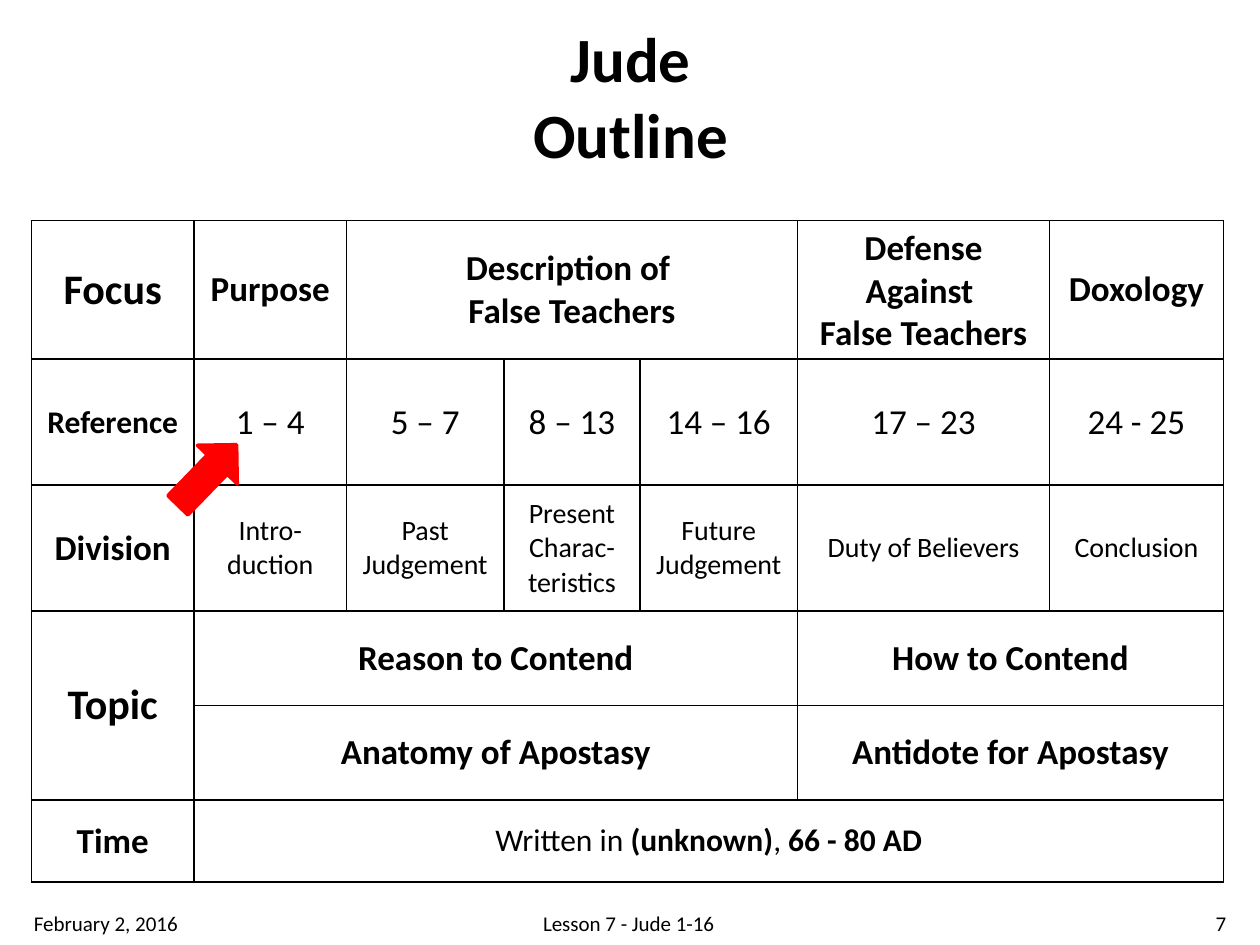
from pptx import Presentation
from pptx.dml.color import RGBColor
from pptx.enum.shapes import MSO_SHAPE
from pptx.enum.text import MSO_ANCHOR, MSO_AUTO_SIZE, PP_ALIGN
from pptx.oxml.ns import qn
from pptx.util import Inches, Pt
from lxml import etree

BLACK = RGBColor(0, 0, 0)
WHITE = RGBColor(255, 255, 255)
RED = RGBColor(255, 0, 0)
LEFT, MID, RIGHT = PP_ALIGN.LEFT, PP_ALIGN.CENTER, PP_ALIGN.RIGHT
FONT = "Calibri"

# Content
TITLE = ["Jude", "Outline"]
COLS = [1.29, 1.21, 1.25, 1.08, 1.25, 2, 1.38]
ROWS = [1, 1, 1, 0.75, 0.75, 0.65]
# Each row: (text, size, bold, rows spanned, columns spanned), left to right
GRID = [
    [("Focus", 24, True, 1, 1), ("Purpose", 20, True, 1, 1),
     (["Description of ", "False Teachers"], 20, True, 1, 3),
     (["Defense Against ", "False Teachers"], 20, True, 1, 1),
     ("Doxology", 20, True, 1, 1)],
    [("Reference", 18, True, 1, 1)]
    + [(verse, 20, False, 1, 1) for verse in
       ("1 – 4", "5 – 7", "8 – 13", "14 – 16", "17 – 23", "24 - 25")],
    [("Division", 20, True, 1, 1)]
    + [(part, 16, False, 1, 1) for part in
       ("Intro-duction", "Past Judgement", "Present Charac-teristics",
        "Future Judgement", "Duty of Believers", "Conclusion")],
    [("Topic", 24, True, 2, 1), ("Reason to Contend", 20, True, 1, 4),
     ("How to Contend", 20, True, 1, 2)],
    [("Anatomy of Apostasy", 20, True, 1, 4),
     ("Antidote for Apostasy", 20, True, 1, 2)],
    [("Time", 20, True, 1, 1),
     ([[("Written in ", False), ("(unknown)", True), (", ", False),
        ("66 - 80 AD", True)]], 18, False, 1, 6)],
]
# Footer: text, left, width, alignment
FOOT = [("February 2, 2016", 0.17, 1.58, LEFT),
        ("Lesson 7 - Jude 1-16", 2.28, 5.42, MID),
        ("7", 9.08, 0.75, RIGHT)]


def write(frame, text, size=12, bold=False, align=MID):
    """Fill a frame; a paragraph is a string or a list of (text, bold) runs."""
    paras = [text] if isinstance(text, str) else text
    for i, para in enumerate(paras):
        p = frame.add_paragraph() if i else frame.paragraphs[0]
        p.alignment = align
        runs = [(para, bold)] if isinstance(para, str) else para
        for words, heavy in runs:
            run = p.add_run()
            run.text = words
            font = run.font
            font.name, font.size, font.bold = FONT, Pt(size), heavy
            font.color.rgb = BLACK


def edge(cell):
    """Draw a thin black line on all four sides of a cell."""
    props = cell._tc.get_or_add_tcPr()
    for side in ("a:lnL", "a:lnR", "a:lnT", "a:lnB"):
        line = etree.SubElement(props, qn(side), w=str(Pt(1)))
        fill = etree.SubElement(line, qn("a:solidFill"))
        etree.SubElement(fill, qn("a:srgbClr"), val=str(BLACK))


def place(shape, *box):
    shape.left, shape.top, shape.width, shape.height = map(Inches, box)


prs = Presentation()
prs.slide_width, prs.slide_height = Inches(10), Inches(7.5)
slide = prs.slides.add_slide(prs.slide_layouts[5])

# Title
title = slide.shapes.title
place(title, 4.12, 0.1, 1.77, 1.31)
frame = title.text_frame
frame.word_wrap = False
frame.auto_size = MSO_AUTO_SIZE.SHAPE_TO_FIT_TEXT
frame.vertical_anchor = MSO_ANCHOR.MIDDLE
write(frame, TITLE, size=36, bold=True)

# Outline table
table = slide.shapes.add_table(
    len(ROWS), len(COLS), Inches(0.25), Inches(1.75),
    Inches(sum(COLS)), Inches(sum(ROWS))).table
table.first_row = table.horz_banding = False
for col, width in zip(table.columns, COLS):
    col.width = Inches(width)
for row, height in zip(table.rows, ROWS):
    row.height = Inches(height)
for cell in table.iter_cells():
    edge(cell)
    cell.fill.solid()
    cell.fill.fore_color.rgb = WHITE
    cell.vertical_anchor = MSO_ANCHOR.MIDDLE

for r, row in enumerate(GRID):
    c = 0
    for text, size, bold, down, across in row:
        while table.cell(r, c).is_spanned:
            c += 1
        cell = table.cell(r, c)
        if down * across > 1:
            cell.merge(table.cell(r + down - 1, c + across - 1))
        write(cell.text_frame, text, size=size, bold=bold)
        c += across

# Arrow to the current passage
arrow = slide.shapes.add_shape(MSO_SHAPE.RIGHT_ARROW, 0, 0, 0, 0)
place(arrow, 1.31, 3.55, 0.67, 0.44)
arrow.rotation = 314.1
arrow.shadow.inherit = False
arrow.fill.solid()
arrow.fill.fore_color.rgb = RED
arrow.line.color.rgb = RED
arrow.line.width = Pt(2)

# Footer
for text, left, width, align in FOOT:
    box = slide.shapes.add_textbox(0, 0, 0, 0)
    place(box, left, 7.13, width, 0.4)
    box.text_frame.word_wrap = True
    box.text_frame.vertical_anchor = MSO_ANCHOR.MIDDLE
    write(box.text_frame, text, align=align)

prs.save("out.pptx")
